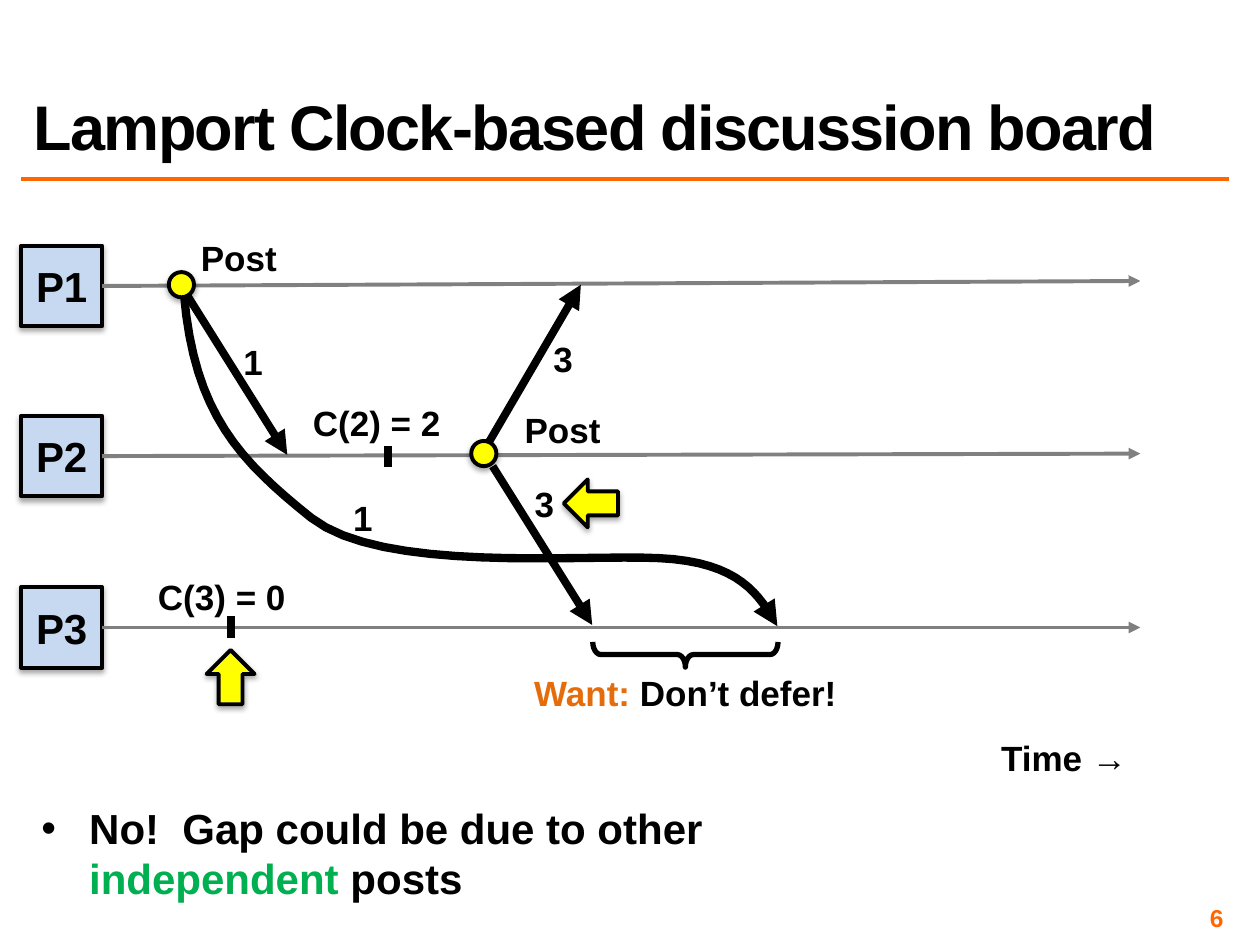
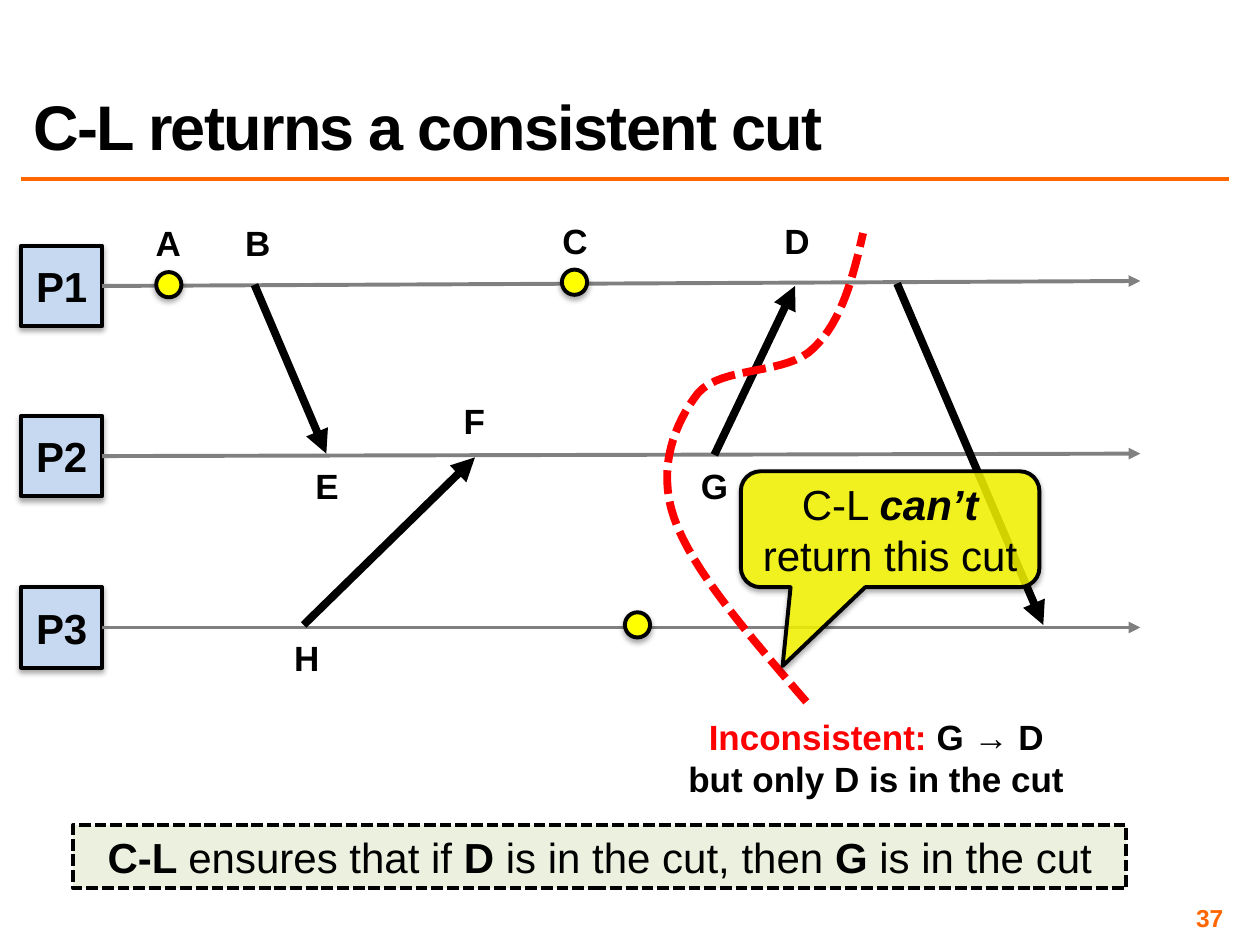
"""Builds two slides on process timelines: Lamport clocks and consistent cuts."""
from lxml.etree import SubElement
from pptx import Presentation
from pptx.dml.color import RGBColor
from pptx.enum.dml import MSO_LINE
from pptx.enum.shapes import MSO_CONNECTOR, MSO_SHAPE
from pptx.enum.text import MSO_ANCHOR, PP_ALIGN
from pptx.oxml.ns import qn
from pptx.util import Pt

PX = 9144
FONT = "Arial"
BLACK = RGBColor(0x00, 0x00, 0x00)
ORANGE = RGBColor(0xFF, 0x66, 0x00)
AMBER = RGBColor(0xE4, 0x6C, 0x0A)
GREEN = RGBColor(0x00, 0xB0, 0x50)
GRAY = RGBColor(0x80, 0x80, 0x80)
BLUE = RGBColor(0xC6, 0xD9, 0xF1)
YELLOW = RGBColor(0xFF, 0xFF, 0x00)
RED = RGBColor(0xFF, 0x00, 0x00)
PALE = RGBColor(0xEB, 0xF1, 0xDE)


def ink(shape, tint, width, head=False, dash=None, fill=None, shade=False):
    """Sets line, arrowhead, fill and shadow."""
    shape.line.color.rgb = tint
    shape.line.width = Pt(width)
    if dash:
        shape.line.dash_style = dash
    if head:
        SubElement(shape.line._get_or_add_ln(), qn("a:tailEnd"), type="triangle")
    if fill is not None:
        shape.fill.solid()
        shape.fill.fore_color.rgb = fill
    effect = SubElement(shape._element.spPr, qn("a:effectLst"))
    if shade:
        cast = SubElement(effect, qn("a:outerShdw"), blurRad="40000", dist="23000",
                          dir="5400000", rotWithShape="0")
        hue = SubElement(cast, qn("a:srgbClr"), val=str(BLACK))
        SubElement(hue, qn("a:alpha"), val="35000")


def write(shape, runs, size, align=PP_ALIGN.CENTER, wrap=True, anchor=MSO_ANCHOR.TOP):
    """Fills a shape with runs of (words, colour, bold, italic)."""
    frame = shape.text_frame
    frame.word_wrap = wrap
    frame.vertical_anchor = anchor
    para = frame.paragraphs[0]
    para.alignment = align
    for words, tint, bold, slant in runs:
        run = para.add_run()
        run.text = words
        font = run.font
        font.name, font.size, font.bold, font.italic = FONT, Pt(size), bold, slant
        font.color.rgb = tint
    return para


DECK = [
    dict(
        title="Lamport Clock-based discussion board", page="6",
        arrows=[(391, 370, 470, 496), (388, 351, 461, 226), (149, 235, 228, 361)],
        ticks=[(308, 354), (183, 489)],
        curve=[(146, 233), (154, 329), (191, 366), (247, 411), (303, 455), (458, 440),
               (523, 443), (588, 446), (603, 473), (617, 497)],
        look=dict(tint=BLACK, width=4.75, head=True),
        dots=[(374, 350), (134, 216)],
        labels=[(784, 580, 121, "Time →"), (238, 314, 122, "C(2) = 2"),
                (183, 265, 36, "1"), (270, 389, 36, "1"), (115, 452, 122, "C(3) = 0"),
                (406, 319, 81, "Post"), (149, 183, 81, "Post"),
                (414, 378, 36, "3"), (429, 263, 36, "3")],
    ),
    dict(
        title="C-L returns a consistent cut", page="37",
        arrows=[(202, 226, 259, 360), (241, 496, 377, 363), (567, 361, 631, 227),
                (712, 225, 828, 496)],
        ticks=[],
        curve=[(640, 557), (595, 505), (549, 452), (535, 411), (521, 371), (536, 335),
               (554, 312), (573, 290), (625, 298), (646, 276), (668, 255), (677, 220),
               (685, 185)],
        look=dict(tint=RED, width=4.5, dash=MSO_LINE.SQUARE_DOT),
        dots=[(124, 216), (446, 214), (496, 486)],
        labels=[(113, 171, 41, "A"), (184, 171, 41, "B"), (436, 169, 41, "C"),
                (612, 169, 41, "D"), (240, 364, 39, "E"), (358, 312, 37, "F"),
                (546, 364, 42, "G"), (223, 500, 41, "H")],
    ),
]

prs = Presentation()
prs.slide_width, prs.slide_height = 1000 * PX, 750 * PX
pages = []

for data in DECK:
    slide = prs.slides.add_slide(prs.slide_layouts[6])
    pages.append(slide.shapes)
    shapes = slide.shapes
    rule = shapes.add_connector(MSO_CONNECTOR.STRAIGHT, 17 * PX, 142 * PX, 975 * PX, 142 * PX)
    ink(rule, ORANGE, 2)

    box = shapes.add_textbox(742 * PX, 717 * PX, 233 * PX, 23 * PX)
    frame = box.text_frame
    frame.margin_left = frame.margin_right = frame.margin_top = frame.margin_bottom = 4 * PX
    write(box, [(data["page"], ORANGE, True, False)], 14, PP_ALIGN.RIGHT,
          anchor=MSO_ANCHOR.MIDDLE)

    box = shapes.add_textbox(17 * PX, 17 * PX, 958 * PX, 117 * PX)
    para = write(box, [(data["title"], BLACK, True, False)], 36, PP_ALIGN.LEFT,
                 anchor=MSO_ANCHOR.BOTTOM)
    para.line_spacing = 0.8
    para.runs[0].font._element.set("spc", "-100")

    for row, end in enumerate((223, 360, 498)):
        top = 195 + row * 271 // 2
        node = shapes.add_shape(MSO_SHAPE.FLOWCHART_PROCESS, 17 * PX, top * PX, 64 * PX, 64 * PX)
        ink(node, BLACK, 2.25, fill=BLUE, shade=True)
        write(node, [(f"P{row + 1}", BLACK, True, False)], 24, wrap=False,
              anchor=MSO_ANCHOR.MIDDLE)
        axis = shapes.add_connector(MSO_CONNECTOR.STRAIGHT, 81 * PX, end * PX, 905 * PX, end * PX)
        axis.begin_connect(node, 3)
        ink(axis, GRAY, 2.25, head=True)

    for spot in data["arrows"]:
        arrow = shapes.add_connector(MSO_CONNECTOR.STRAIGHT, *(v * PX for v in spot))
        ink(arrow, BLACK, 4.5, head=True)

    for x, y in data["ticks"]:
        tick = shapes.add_connector(MSO_CONNECTOR.STRAIGHT, x * PX, y * PX, x * PX, (y + 17) * PX)
        ink(tick, BLACK, 4.5)

    knots = data["curve"]
    trail = []
    for i in range(0, len(knots) - 1, 3):
        for step in range(1, 17):
            t = step / 16
            rates = ((1 - t) ** 3, 3 * t * (1 - t) ** 2, 3 * t * t * (1 - t), t ** 3)
            trail.append(tuple(
                round(sum(r * k[side] for r, k in zip(rates, knots[i:i + 4])) * PX)
                for side in (0, 1)))
    pen = shapes.build_freeform(knots[0][0] * PX, knots[0][1] * PX)
    pen.add_line_segments(trail, close=False)
    curve = pen.convert_to_shape()
    curve.fill.background()
    ink(curve, **data["look"])

    for x, y in data["dots"]:
        dot = shapes.add_shape(MSO_SHAPE.OVAL, x * PX, y * PX, 20 * PX, 20 * PX)
        ink(dot, BLACK, 2.25, fill=YELLOW, shade=True)

    for x, y, wide, words in data["labels"]:
        box = shapes.add_textbox(x * PX, y * PX, wide * PX, 44 * PX)
        write(box, [(words, BLACK, True, False)], 20, wrap=False)

board, cut = pages

brace = board.add_shape(MSO_SHAPE.LEFT_BRACE, 534 * PX, 446 * PX, 20 * PX, 147 * PX)
brace.rotation = 270
brace.adjustments[0] = 0.32
brace.fill.background()
ink(brace, BLACK, 3)

want = board.add_textbox(409 * PX, 528 * PX, 270 * PX, 44 * PX)
write(want, [("Want: ", AMBER, True, False), ("Don’t defer!", BLACK, True, False)], 20,
      wrap=False)

for x, y, turn in ((450, 378, 270), (164, 516, 0)):
    mark = board.add_shape(MSO_SHAPE.UP_ARROW, x * PX, y * PX, 38 * PX, 43 * PX)
    mark.rotation = turn
    ink(mark, BLACK, 2.25, fill=YELLOW, shade=True)

answer = board.add_textbox(23 * PX, 632 * PX, 570 * PX, 91 * PX)
para = write(answer, [("No!  Gap could be due to other ", BLACK, True, False),
                      ("independent", GREEN, True, False),
                      (" posts", BLACK, True, False)], 24, PP_ALIGN.LEFT)
props = para._p.get_or_add_pPr()
props.set("marL", str(38 * PX))
props.set("indent", str(-38 * PX))
SubElement(props, qn("a:buFont"), typeface=FONT)
SubElement(props, qn("a:buChar"), char="•")

verdict = cut.add_textbox(529 * PX, 563 * PX, 333 * PX, 77 * PX)
write(verdict, [("Inconsistent:", RED, True, False),
                (" G → D but only D is in the cut", BLACK, True, False)], 20)

bubble = cut.add_shape(MSO_SHAPE.ROUNDED_RECTANGULAR_CALLOUT,
                       588 * PX, 374 * PX, 237 * PX, 92 * PX)
for i, share in enumerate((-0.36, 1.18, 0.17)):
    bubble.adjustments[i] = share
ink(bubble, BLACK, 2.25, fill=YELLOW, shade=True)
hue = bubble._element.spPr.find(qn("a:solidFill")).find(qn("a:srgbClr"))
SubElement(hue, qn("a:alpha"), val="82000")
write(bubble, [("C-L ", BLACK, False, False), ("can’t", BLACK, True, True),
               (" return this cut", BLACK, False, False)], 24, anchor=MSO_ANCHOR.MIDDLE)

claim = cut.add_shape(MSO_SHAPE.RECTANGLE, 58 * PX, 655 * PX, 836 * PX, 50 * PX)
ink(claim, BLACK, 2.25, dash=MSO_LINE.SQUARE_DOT, fill=PALE)
write(claim, [("C-L ", BLACK, True, False), ("ensures that if", BLACK, False, False),
              (" D ", BLACK, True, False), ("is in the cut, then ", BLACK, False, False),
              ("G ", BLACK, True, False), ("is in the cut", BLACK, False, False)], 24)

prs.save("out.pptx")
